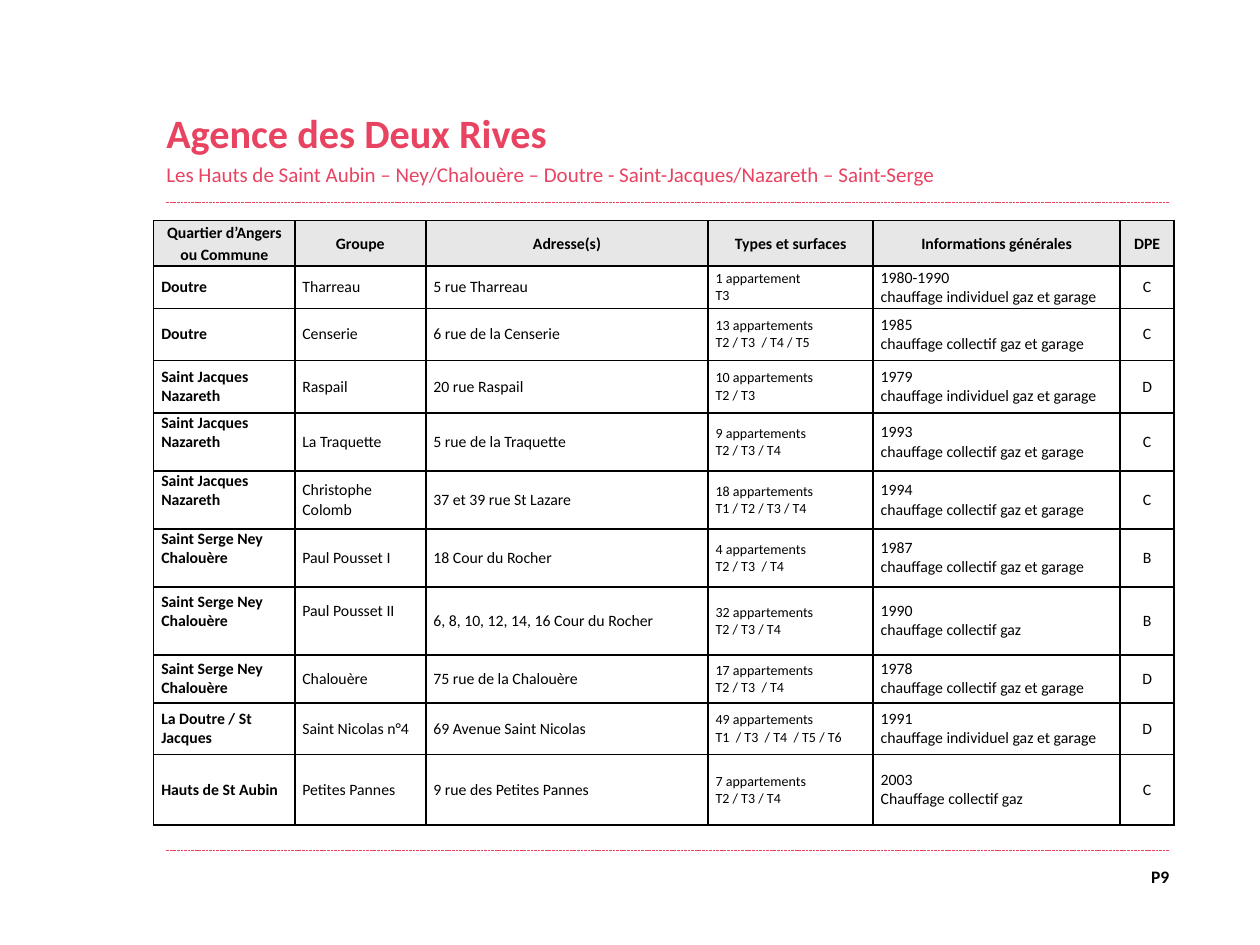
from lxml.etree import SubElement
from pptx import Presentation
from pptx.dml.color import RGBColor
from pptx.enum.dml import MSO_LINE
from pptx.enum.shapes import MSO_CONNECTOR
from pptx.enum.text import MSO_ANCHOR, MSO_AUTO_SIZE, PP_ALIGN
from pptx.oxml.ns import qn
from pptx.util import Inches, Pt

PINK = RGBColor(0xE9, 0x43, 0x62)
BLACK = RGBColor(0x00, 0x00, 0x00)
GREY = RGBColor(0xE7, 0xE7, 0xE7)
FONT = "Calibri"

COL_WIDTHS = [1.12, 1.04, 2.24, 1.31, 1.96, 0.43]
ROW_HEIGHTS = [0.36, 0.34, 0.41, 0.42, 0.46, 0.46, 0.46, 0.54, 0.38, 0.41, 0.56]
HEADERS = ["Quartier d’Angers ou Commune", "Groupe", "Adresse(s)",
           "Types et surfaces", "Informations générales", "DPE"]
INDIVIDUAL = "chauffage individuel gaz et garage"
COLLECTIVE = "chauffage collectif gaz et garage"
NAZARETH = "Saint Jacques Nazareth"
SERGE = "Saint Serge Ney Chalouère"
RESIDENCES = [
    ["Doutre", "Tharreau", "5 rue Tharreau",
     "1 appartement\nT3", f"1980-1990\n{INDIVIDUAL}", "C"],
    ["Doutre", "Censerie", "6 rue de la Censerie",
     "13 appartements\nT2 / T3  / T4 / T5", f"1985\n{COLLECTIVE}", "C"],
    [NAZARETH, "Raspail", "20 rue Raspail",
     "10 appartements\nT2 / T3", f"1979\n{INDIVIDUAL}", "D"],
    [NAZARETH, "La Traquette", "5 rue de la Traquette",
     "9 appartements\nT2 / T3 / T4", f"1993\n{COLLECTIVE}", "C"],
    [NAZARETH, "Christophe Colomb", "37 et 39 rue St Lazare",
     "18 appartements\nT1 / T2 / T3 / T4", f"1994\n{COLLECTIVE}", "C"],
    [SERGE, "Paul Pousset I", "18 Cour du Rocher",
     "4 appartements\nT2 / T3  / T4", f"1987\n{COLLECTIVE}", "B"],
    [SERGE, "Paul Pousset II", "6, 8, 10, 12, 14, 16 Cour du Rocher",
     "32 appartements\nT2 / T3 / T4", "1990\nchauffage collectif gaz", "B"],
    [SERGE, "Chalouère", "75 rue de la Chalouère",
     "17 appartements\nT2 / T3  / T4", f"1978\n{COLLECTIVE}", "D"],
    ["La Doutre / St Jacques", "Saint Nicolas n°4", "69 Avenue Saint Nicolas",
     "49 appartements\nT1  / T3  / T4  / T5 / T6", f"1991\n{INDIVIDUAL}", "D"],
    ["Hauts de St Aubin", "Petites Pannes", "9 rue des Petites Pannes",
     "7 appartements\nT2 / T3 / T4", "2003\nChauffage collectif gaz", "C"],
]
TYPES_COL, DPE_COL = 3, 5
# (row, column) of the cells whose text sits above the middle
RAISED = {(4, 0), (5, 0), (6, 0), (7, 0), (7, 1)}


def style_paragraph(p, size, color=BLACK, bold=False, **layout):
    for name, value in layout.items():
        setattr(p, name, value)
    p.font.color.rgb = color
    for name, value in {"name": FONT, "size": Pt(size), "bold": bold}.items():
        setattr(p.font, name, value)


def clear_frame(tf, anchor):
    """Give a text frame no insets, wrapping and a fixed size."""
    settings = {"margin_left": 0, "margin_top": 0, "margin_right": 0, "margin_bottom": 0,
                "word_wrap": True, "auto_size": MSO_AUTO_SIZE.NONE,
                "vertical_anchor": anchor}
    for name, value in settings.items():
        setattr(tf, name, value)


def add_rule(slide, left, top, width):
    line = slide.shapes.add_connector(MSO_CONNECTOR.STRAIGHT, left, top, left + width, top)
    line.line.color.rgb = PINK
    line.line.width = Pt(0.5)
    line.line.dash_style = MSO_LINE.SQUARE_DOT
    SubElement(line._element.spPr, qn("a:effectLst"))


def add_heading(slide, left, top, width, height):
    title, body = slide.placeholders
    title._element.getparent().remove(title._element)
    body.left, body.top, body.width, body.height = left, top, width, height
    tf = body.text_frame
    tf.text = ("Agence des Deux Rives\n"
               "Les Hauts de Saint Aubin – Ney/Chalouère – Doutre - "
               "Saint-Jacques/Nazareth – Saint-Serge")
    clear_frame(tf, MSO_ANCHOR.BOTTOM)
    name, districts = tf.paragraphs
    style_paragraph(name, 23, PINK, bold=True, space_before=Pt(0))
    style_paragraph(districts, 12, PINK, space_before=Pt(2.4))


def add_borders(cell):
    tc_pr = cell._tc.get_or_add_tcPr()
    for side in ("lnL", "lnR", "lnT", "lnB"):
        ln = SubElement(tc_pr, qn(f"a:{side}"), w=str(Pt(1)))
        fill = SubElement(ln, qn("a:solidFill"))
        SubElement(fill, qn("a:srgbClr"), val=str(BLACK))


def fill_cell(cell, text, row, col):
    header = row == 0
    cell.text = text
    cell.vertical_anchor = MSO_ANCHOR.MIDDLE
    cell.margin_left = cell.margin_right = Inches(0.06)
    cell.margin_top = 0
    cell.margin_bottom = Inches(0.15) if (row, col) in RAISED else 0
    add_borders(cell)
    if header:
        cell.fill.solid()
        cell.fill.fore_color.rgb = GREY
    else:
        cell.fill.background()
    centred = header or col == DPE_COL
    for p in cell.text_frame.paragraphs:
        style_paragraph(p, 8 if col == TYPES_COL and not header else 9,
                        bold=header or col == 0,
                        alignment=PP_ALIGN.CENTER if centred else PP_ALIGN.LEFT,
                        line_spacing=1.15 if header else 1.0)


def add_residence_table(slide, left, top):
    rows = [HEADERS] + RESIDENCES
    frame = slide.shapes.add_table(len(rows), len(HEADERS), left, top,
                                   Inches(sum(COL_WIDTHS)), Inches(sum(ROW_HEIGHTS)))
    table = frame.table
    table.horz_banding = False
    for column, width in zip(table.columns, COL_WIDTHS):
        column.width = Inches(width)
    for row, height in zip(table.rows, ROW_HEIGHTS):
        row.height = Inches(height)
    for r, texts in enumerate(rows):
        for c, text in enumerate(texts):
            fill_cell(table.cell(r, c), text, r, c)


def add_page_number(slide, left, top, width, height):
    tf = slide.shapes.add_textbox(left, top, width, height).text_frame
    clear_frame(tf, MSO_ANCHOR.TOP)
    tf.text = "P9"
    style_paragraph(tf.paragraphs[0], 10, bold=True, alignment=PP_ALIGN.RIGHT)


def main():
    prs = Presentation()
    prs.slide_width, prs.slide_height = Inches(10), Inches(7.5)
    slide = prs.slides.add_slide(prs.slide_layouts.get_by_name("Section Header"))
    left, width = Inches(1.32), Inches(7.96)
    for top in (1.61, 6.75):
        add_rule(slide, left, Inches(top), width)
    add_page_number(slide, Inches(8.94), Inches(6.87), Inches(0.34), Inches(0.2))
    add_heading(slide, left, Inches(0.73), Inches(6.24), Inches(0.75))
    add_residence_table(slide, Inches(1.22), Inches(1.75))
    prs.save("out.pptx")


if __name__ == "__main__":
    main()
